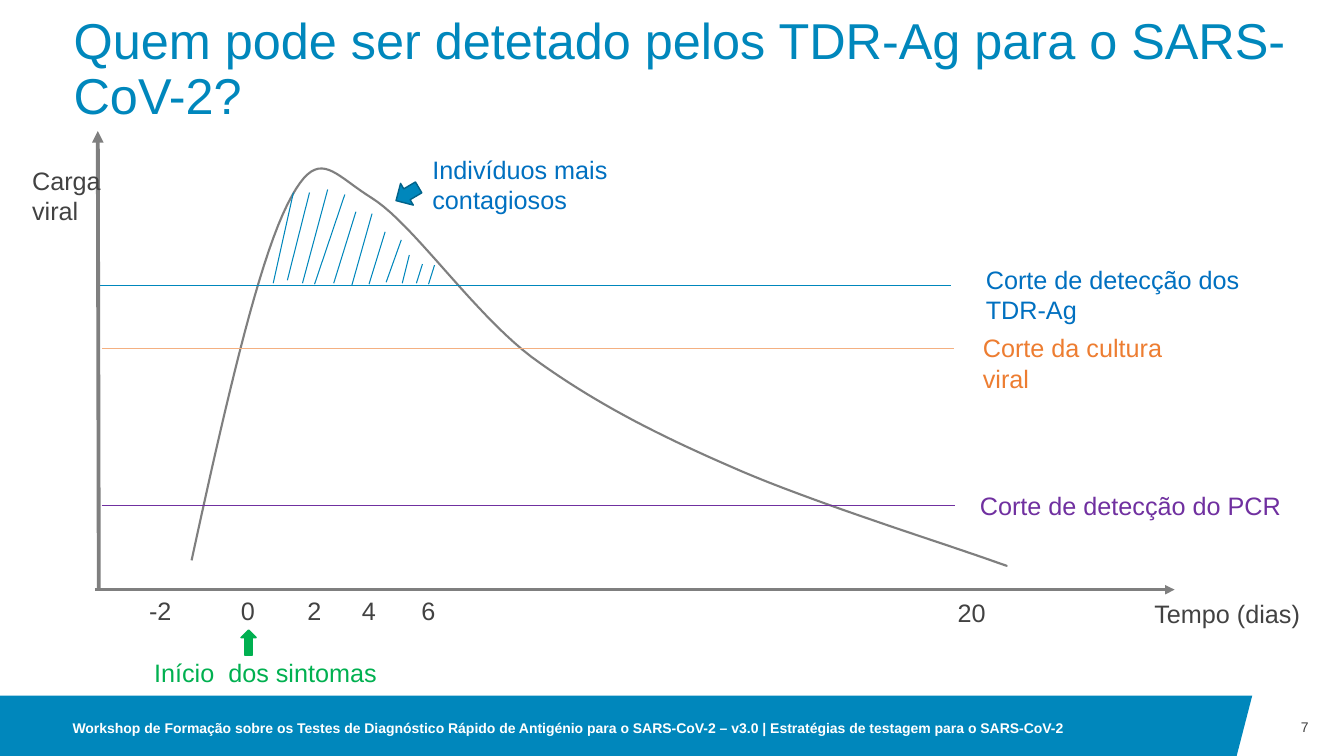
from lxml import etree
from pptx import Presentation
from pptx import util as u
from pptx.dml.color import RGBColor
from pptx.enum import shapes, text
from pptx.oxml.ns import qn

BLUE, LABEL_BLUE, GREY, DARK = "0087BC", "0070C0", "7F7F7F", "424242"
GREEN, PURPLE, ORANGE, WHITE = "00B050", "7030A0", "ED7D31", "FFFFFF"

CURVE_START = (0.9, 4.26)
CURVE_SEGMENTS = [
    ((1.22, 2.79), (1.55, 1.33), (1.85, 0.73)),
    ((2.15, 0.13), (2.28, 0.41), (2.68, 0.66)),
    ((3.09, 0.91), (3.68, 1.79), (4.27, 2.24)),
    ((4.87, 2.68), (5.49, 3.0), (6.25, 3.33)),
    ((7.01, 3.67), (8.45, 4.12), (8.83, 4.26)),
    ((9.2, 4.39), (8.84, 4.26), (8.48, 4.14)),
]
HATCHES = [
    (1.91, 0.61, 1.71, 1.51), (2.07, 0.61, 1.85, 1.48), (2.25, 0.58, 2.0, 1.51),
    (2.42, 0.63, 2.12, 1.52), (2.53, 0.8, 2.31, 1.51), (2.69, 0.82, 2.49, 1.53),
    (2.82, 1.0, 2.66, 1.52), (2.98, 1.08, 2.83, 1.5), (3.06, 1.23, 2.99, 1.51),
    (3.19, 1.32, 3.13, 1.51), (3.31, 1.33, 3.25, 1.52),
]
CUTOFFS = [
    ("Corte de detecção dos TDR-Ag", 1.53, BLUE, LABEL_BLUE, -0.02, 8.43, (8.68, 1.27, 2.97, 0.71)),
    ("Corte da cultura viral", 2.16, "F4B081", ORANGE, 0.01, 8.46, (8.65, 1.95, 2.3, 0.71)),
    ("Corte de detecção do PCR", 3.72, PURPLE, PURPLE, 0.01, 8.47, (8.62, 3.52, 3.33, 0.4)),
]
DAYS = [("-2", 0.38, 0.5), ("0", 1.29, 0.29), ("2", 1.95, 0.29),
        ("4", 2.49, 0.29), ("6", 3.08, 0.29)]


def colour(value):
    return RGBColor.from_string(value)


def place(box, part):
    left, top, width, height = part
    return box[0] + left, box[1] + top, width, height


def add_text(slide, box, content, size=18, color=DARK, bold=False, margins=(0.1, 0.05),
             align=text.PP_ALIGN.LEFT, anchor=text.MSO_ANCHOR.TOP, spacing=1.0):
    shape = slide.shapes.add_textbox(*map(u.Inches, box))
    frame = shape.text_frame
    frame.word_wrap = True
    frame.vertical_anchor = anchor
    frame.margin_left = frame.margin_right = u.Inches(margins[0])
    frame.margin_top = frame.margin_bottom = u.Inches(margins[1])
    paragraph = frame.paragraphs[0]
    paragraph.alignment = align
    paragraph.line_spacing = spacing
    run = paragraph.add_run()
    run.text = content
    run.font.name = "Arial"
    run.font.size = u.Pt(size)
    run.font.bold = bold
    run.font.color.rgb = colour(color)


def add_line(slide, box, ends, color, width=0.75, arrow=False):
    x1, y1, x2, y2 = ends
    line = slide.shapes.add_connector(
        shapes.MSO_CONNECTOR.STRAIGHT,
        u.Inches(box[0] + x1), u.Inches(box[1] + y1),
        u.Inches(box[0] + x2), u.Inches(box[1] + y2))
    line.line.color.rgb = colour(color)
    line.line.width = u.Pt(width)
    if arrow:
        etree.SubElement(line.line._get_or_add_ln(), qn("a:tailEnd"), type="triangle")
    etree.SubElement(line._element.spPr, qn("a:effectLst"))


def add_outline(slide, points, closed):
    points = [(u.Inches(x), u.Inches(y)) for x, y in points]
    builder = slide.shapes.build_freeform(*points[0])
    builder.add_line_segments(points[1:], close=closed)
    shape = builder.convert_to_shape()
    shape.shadow.inherit = False
    return shape


def add_arrow(slide, box, rotation, fill, line):
    arrow = slide.shapes.add_shape(shapes.MSO_SHAPE.RIGHT_ARROW, *map(u.Inches, box))
    arrow.rotation = rotation
    arrow.shadow.inherit = False
    arrow.fill.solid()
    arrow.fill.fore_color.rgb = colour(fill)
    arrow.line.color.rgb = colour(line)
    arrow.line.width = u.Pt(1)


def curve_points(steps=20):
    points = [CURVE_START]
    for control1, control2, end in CURVE_SEGMENTS:
        start = points[-1]
        for step in range(1, steps + 1):
            t = step / steps
            s = 1 - t
            points.append(tuple(
                s ** 3 * a + 3 * s * s * t * b + 3 * s * t * t * c + t ** 3 * d
                for a, b, c, d in zip(start, control1, control2, end)))
    return points


def add_title(slide, box):
    add_text(slide, box, "Quem pode ser detetado pelos TDR-Ag para o SARS-CoV-2?",
             size=36, color=BLUE, margins=(0, 0), anchor=text.MSO_ANCHOR.BOTTOM, spacing=0.9)


def add_axes(slide, box):
    width, height = box[2:]
    add_line(slide, box, (-0.06, height, width, height), GREY, 2.25, arrow=True)
    add_line(slide, box, (-0.02, height, -0.03, 0), GREY, 2.75, arrow=True)
    add_text(slide, place(box, (-0.78, 0.29, 1.01, 0.71)), "Carga viral")
    add_text(slide, place(box, (width - 0.3, height + 0.04, 1.98, 0.4)), "Tempo (dias)")
    for day, left, label_width in DAYS:
        add_text(slide, place(box, (left, height + 0.01, label_width, 0.4)), day)
    add_text(slide, place(box, (8.4, height + 0.03, 0.65, 0.4)), "20")


def add_viral_load(slide, box):
    curve = add_outline(slide, [(box[0] + x, box[1] + y) for x, y in curve_points()], False)
    curve.fill.background()
    curve.line.color.rgb = colour(GREY)
    curve.line.width = u.Pt(1.5)
    for label, height, line_color, text_color, start, end, label_box in CUTOFFS:
        add_line(slide, box, (start, height, end, height), line_color)
        add_text(slide, place(box, label_box), label, color=text_color)
    for hatch in HATCHES:
        add_line(slide, box, hatch, BLUE)


def add_callouts(slide, box):
    add_arrow(slide, place(box, (2.91, 0.5, 0.26, 0.25)), 149.6, BLUE, "006289")
    add_text(slide, place(box, (3.19, 0.18, 2.78, 0.71)), "Indivíduos mais contagiosos",
             color=LABEL_BLUE)
    add_arrow(slide, place(box, (1.34, 5.0, 0.25, 0.15)), 270, GREEN, GREEN)
    add_text(slide, place(box, (0.43, 5.17, 2.69, 0.4)), "Início  dos sintomas", color=GREEN)


def add_footer(slide, box):
    left, top, width, height = box
    band_right = left + 12.42
    band = add_outline(slide, [(left, top), (band_right, top),
                               (band_right - 0.16, top + height), (left, top + height)], True)
    band.fill.solid()
    band.fill.fore_color.rgb = colour(BLUE)
    band.line.fill.background()
    add_text(slide, place(box, (0.72, 0.05, 10.06, 0.55)),
             "Workshop de Formação sobre os Testes de Diagnóstico Rápido de Antigénio para o "
             "SARS-CoV-2 – v3.0 | Estratégias de testagem para o SARS-CoV-2",
             size=10, color=WHITE, bold=True, margins=(0, 0), anchor=text.MSO_ANCHOR.MIDDLE)
    add_text(slide, (band_right, top, 0.56, height), "7", size=10, margins=(0, 0),
             align=text.PP_ALIGN.RIGHT, anchor=text.MSO_ANCHOR.MIDDLE)


def main():
    presentation = Presentation()
    presentation.slide_width = u.Inches(13.33)
    presentation.slide_height = u.Inches(7.5)
    slide = presentation.slides.add_slide(presentation.slide_layouts[6])
    plot = (1, 1.3, 10.65, 4.55)
    add_footer(slide, (0, 6.9, 13.33, 0.62))
    add_title(slide, (0.73, 0.21, 12.08, 1.03))
    add_viral_load(slide, plot)
    add_axes(slide, plot)
    add_callouts(slide, plot)
    presentation.save("out.pptx")


if __name__ == "__main__":
    main()
